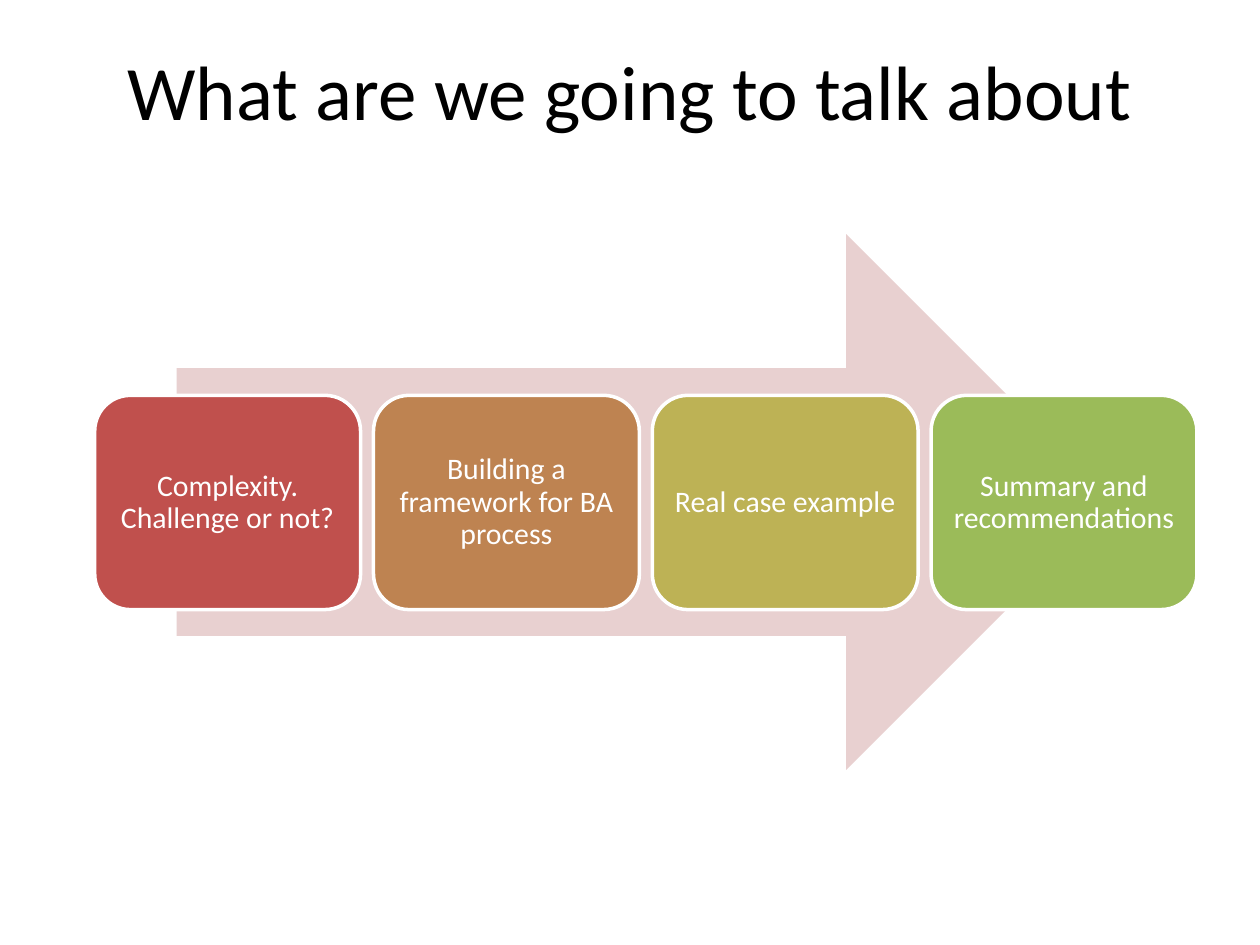
from dataclasses import dataclass

from pptx import Presentation
from pptx.dml.color import RGBColor
from pptx.enum.shapes import MSO_SHAPE
from pptx.enum.text import MSO_ANCHOR, PP_ALIGN
from pptx.util import Cm, Pt

RIGHT_ARROW = MSO_SHAPE.RIGHT_ARROW
ROUNDED = MSO_SHAPE.ROUNDED_RECTANGLE
TOP, MIDDLE = MSO_ANCHOR.TOP, MSO_ANCHOR.MIDDLE
CENTER = PP_ALIGN.CENTER


@dataclass(frozen=True)
class Theme:
    font: str = "Calibri"
    title_size: int = 44
    card_size: int = 17
    title_color: str = "000000"
    card_text: str = "FFFFFF"
    card_line: str = "FFFFFF"
    arrow: str = "E8D0D0"
    cards: tuple = ("C0504D", "BE8351", "BDB255", "9BBB59")


class SlideBuilder:
    def __init__(self, slide, theme):
        self.slide = slide
        self.theme = theme

    def _write(self, tf, text, size, color, anchor):
        tf.word_wrap = True
        tf.vertical_anchor = anchor
        p = tf.paragraphs[0]
        p.text = text
        p.alignment = CENTER
        p.font.name = self.theme.font
        p.font.size = Pt(size)
        p.font.color.rgb = RGBColor.from_string(color)
        return p

    def _shape(self, kind, box, fill):
        sp = self.slide.shapes.add_shape(kind, *map(Cm, box))
        sp.shadow.inherit = False
        sp.fill.solid()
        sp.fill.fore_color.rgb = RGBColor.from_string(fill)
        return sp

    def title(self, text, box):
        tf = self.slide.shapes.add_textbox(*map(Cm, box)).text_frame
        self._write(tf, text, self.theme.title_size, self.theme.title_color, TOP)

    def arrow(self, box):
        sp = self._shape(RIGHT_ARROW, box, self.theme.arrow)
        sp.line.fill.background()

    def card(self, text, box, fill):
        sp = self._shape(ROUNDED, box, fill)
        sp.line.color.rgb = RGBColor.from_string(self.theme.card_line)
        sp.line.width = Pt(2)
        tf = sp.text_frame
        tf.margin_left = tf.margin_right = Cm(0.18)
        tf.margin_top = tf.margin_bottom = Cm(0.18)
        p = self._write(tf, text, self.theme.card_size, self.theme.card_text, MIDDLE)
        p.line_spacing = 0.9


def main():
    prs = Presentation()
    prs.slide_width, prs.slide_height = Cm(25.4), Cm(19.05)
    theme = Theme()
    s = SlideBuilder(prs.slides.add_slide(prs.slide_layouts[6]), theme)

    s.arrow((3.56, 4.72, 18.9, 10.8))

    topics = (
        "Complexity. Challenge or not?",
        "Building a framework for BA process",
        "Real case example",
        "Summary and recommendations",
    )
    left, top, width, height, gap = 1.91, 7.97, 5.36, 4.32, 0.26
    for i, (topic, fill) in enumerate(zip(topics, theme.cards)):
        s.card(topic, (left + i * (width + gap), top, width, height), fill)

    s.title("What are we going to talk about", (1.27, 0.76, 22.86, 3.18))
    prs.save("out.pptx")


if __name__ == "__main__":
    main()
